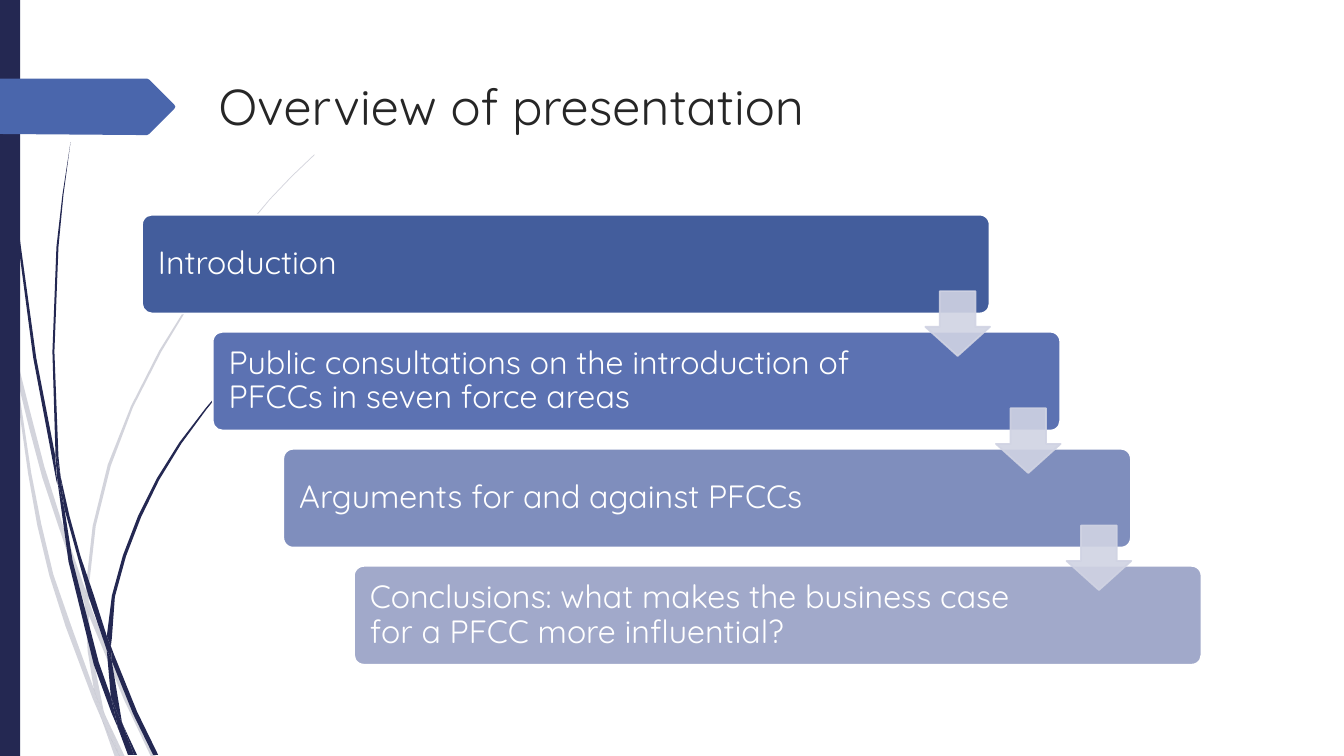
from lxml.etree import SubElement
from pptx import Presentation
from pptx.dml.color import RGBColor
from pptx.enum.shapes import MSO_SHAPE
from pptx.enum.text import MSO_ANCHOR, PP_ALIGN
from pptx.oxml.ns import qn
from pptx.util import Cm, Pt

COLORS = {
    "navy": "242852",
    "blue": "4A66AC",
    "title": "262626",
    "white": "FFFFFF",
    "arrow": "D0D3E3",
}
FONT = "Quicksand"

STEPS = [
    ("Introduction", "435D9C"),
    ("Public consultations on the introduction of PFCCs in seven force areas", "5C72B2"),
    ("Arguments for and against PFCCs", "7F8EBD"),
    ("Conclusions: what makes the business case for a PFCC more influential?", "A1A9CA"),
]
STEP_RIGHT, STEP_DOWN = 1.78, 2.95

# Grass blades and the title tag, in hundredths of an inch
GRID = Cm(2.54) / 100
PALE_BLADES = [
    [(11, 350), (9, 322), (0, 282), (0, 299), (10, 344)],
    [(58, 522), (84, 599), (85, 586), (62, 520), (44, 463), (29, 405), (14, 345),
     (17, 376), (29, 425), (42, 474)],
    [(92, 607), (88, 596), (88, 610), (123, 694), (150, 751), (155, 751), (127, 692)],
    [(119, 751), (124, 751), (105, 711)],
    [(93, 683), (70, 619), (53, 570), (41, 520), (31, 469), (17, 376), (11, 350),
     (28, 470), (37, 521), (49, 571), (65, 621), (92, 693), (101, 714), (99, 707)],
    [(84, 599), (87, 646), (93, 683), (96, 692), (105, 711), (103, 706), (91, 646),
     (88, 610), (88, 608)],
    [(88, 584), (95, 522), (110, 462), (132, 404), (160, 349), (192, 296), (229, 245),
     (268, 198), (290, 175), (312, 154), (312, 153), (289, 175), (268, 197), (228, 244),
     (191, 295), (158, 348), (130, 403), (107, 461), (92, 522), (85, 584), (85, 586),
     (88, 596)],
    [(101, 714), (114, 751), (119, 751)],
    [(88, 608), (88, 610), (88, 596), (85, 586), (84, 599)],
    [(96, 692), (93, 683), (99, 707), (101, 714), (119, 751), (105, 711)],
]
DARK_BLADES = [
    [(7, 110), (17, 233), (33, 355), (56, 477), (57, 481), (55, 457), (55, 453),
     (36, 355), (19, 232), (8, 109), (5, 48), (4, 0), (3, 0), (4, 48)],
    [(88, 592), (106, 645), (106, 631), (93, 590), (80, 552), (69, 512), (60, 472),
     (64, 505)],
    [(113, 649), (110, 641), (111, 656), (132, 708), (152, 749), (157, 749), (136, 706)],
    [(110, 691), (98, 657), (72, 556), (64, 505), (57, 477), (68, 557), (93, 659),
     (111, 708), (117, 722), (116, 717)],
    [(60, 472), (58, 453), (54, 349), (58, 245), (63, 193), (70, 141), (62, 193),
     (56, 245), (52, 349), (55, 449)],
    [(133, 749), (136, 749), (122, 719)],
    [(57, 477), (64, 505), (60, 472), (55, 449), (55, 453)],
    [(111, 633), (114, 592), (125, 552), (140, 513), (158, 476), (180, 440), (205, 406),
     (231, 374), (245, 359), (261, 344), (260, 344), (245, 358), (231, 373), (204, 405),
     (178, 439), (156, 474), (137, 512), (122, 551), (111, 591), (106, 631), (110, 641)],
    [(117, 722), (127, 749), (131, 749)],
    [(106, 645), (110, 691), (116, 706), (122, 719), (121, 716), (111, 656), (109, 651)],
    [(106, 645), (109, 651), (111, 656), (110, 641), (106, 631)],
    [(116, 706), (110, 691), (116, 717), (117, 722), (130, 749), (133, 749), (122, 719)],
]
TITLE_TAG = [(0, 78), (146, 78), (148, 79), (173, 104), (174, 106), (173, 108),
             (148, 133), (146, 134), (136, 134), (0, 133)]


def set_color(paint, color, opacity=100):
    """Make a fill solid, with an optional opacity in percent."""
    paint.solid()
    paint.fore_color.rgb = RGBColor.from_string(color)
    if opacity < 100:
        # An alpha child of the colour carries the transparency
        srgb = next(paint._xPr.iter(qn("a:srgbClr")))
        SubElement(srgb, qn("a:alpha")).set("val", str(opacity * 1000))


def paint_shape(shape, color, line=None, opacity=100):
    shape.shadow.inherit = False
    set_color(shape.fill, color, opacity)
    if line:
        set_color(shape.line.fill, line, opacity)
        shape.line.width = Pt(1.25)
    else:
        shape.line.fill.background()


def add_outline(slide, points, color, opacity=100):
    builder = slide.shapes.build_freeform(*points[0], scale=GRID)
    builder.add_line_segments(points[1:], close=True)
    paint_shape(builder.convert_to_shape(), color, opacity=opacity)


def write(frame, text, size, color):
    frame.word_wrap = True
    paragraph = frame.paragraphs[0]
    paragraph.text = text
    paragraph.alignment = PP_ALIGN.LEFT
    paragraph.font.name = FONT
    paragraph.font.size = Pt(size)
    paragraph.font.color.rgb = RGBColor.from_string(color)
    return paragraph


def add_title(slide, text):
    title = slide.shapes.add_textbox(Cm(5.26), Cm(1.78), Cm(28.32), Cm(3.05))
    write(title.text_frame, text, 36, COLORS["title"])


def add_step(slide, index, text, color):
    step = slide.shapes.add_shape(
        MSO_SHAPE.ROUNDED_RECTANGLE,
        Cm(3.58 + index * STEP_RIGHT), Cm(5.41 + index * STEP_DOWN), Cm(21.36), Cm(2.49))
    step.adjustments[0] = 0.1
    paint_shape(step, color, line=COLORS["white"])
    frame = step.text_frame
    frame.vertical_anchor = MSO_ANCHOR.MIDDLE
    frame.margin_left, frame.margin_right = Cm(0.33), Cm(3.73)
    write(frame, text, 23, COLORS["white"]).line_spacing = 0.9


def add_step_arrow(slide, index):
    arrow = slide.shapes.add_shape(
        MSO_SHAPE.DOWN_ARROW,
        Cm(23.32 + index * STEP_RIGHT), Cm(7.34 + index * STEP_DOWN), Cm(1.63), Cm(1.63))
    arrow.adjustments[0] = 0.55
    arrow.adjustments[1] = 0.45
    paint_shape(arrow, COLORS["arrow"], line=COLORS["arrow"], opacity=90)


def main():
    deck = Presentation()
    deck.slide_width, deck.slide_height = Cm(33.87), Cm(19.05)
    slide = deck.slides.add_slide(deck.slide_layouts[6])

    # Grass blades, side bar and title tag
    for blade in PALE_BLADES:
        add_outline(slide, blade, COLORS["navy"], opacity=20)
    for blade in DARK_BLADES:
        add_outline(slide, blade, COLORS["navy"])
    side_bar = slide.shapes.add_shape(MSO_SHAPE.RECTANGLE, 0, 0, Cm(0.51), deck.slide_height)
    paint_shape(side_bar, COLORS["navy"])
    add_outline(slide, TITLE_TAG, COLORS["blue"])

    add_title(slide, "Overview of presentation")

    # Staircase of steps, with an arrow between neighbours
    for index, (text, color) in enumerate(STEPS):
        add_step(slide, index, text, color)
    for index in range(len(STEPS) - 1):
        add_step_arrow(slide, index)

    deck.save("out.pptx")


if __name__ == "__main__":
    main()
